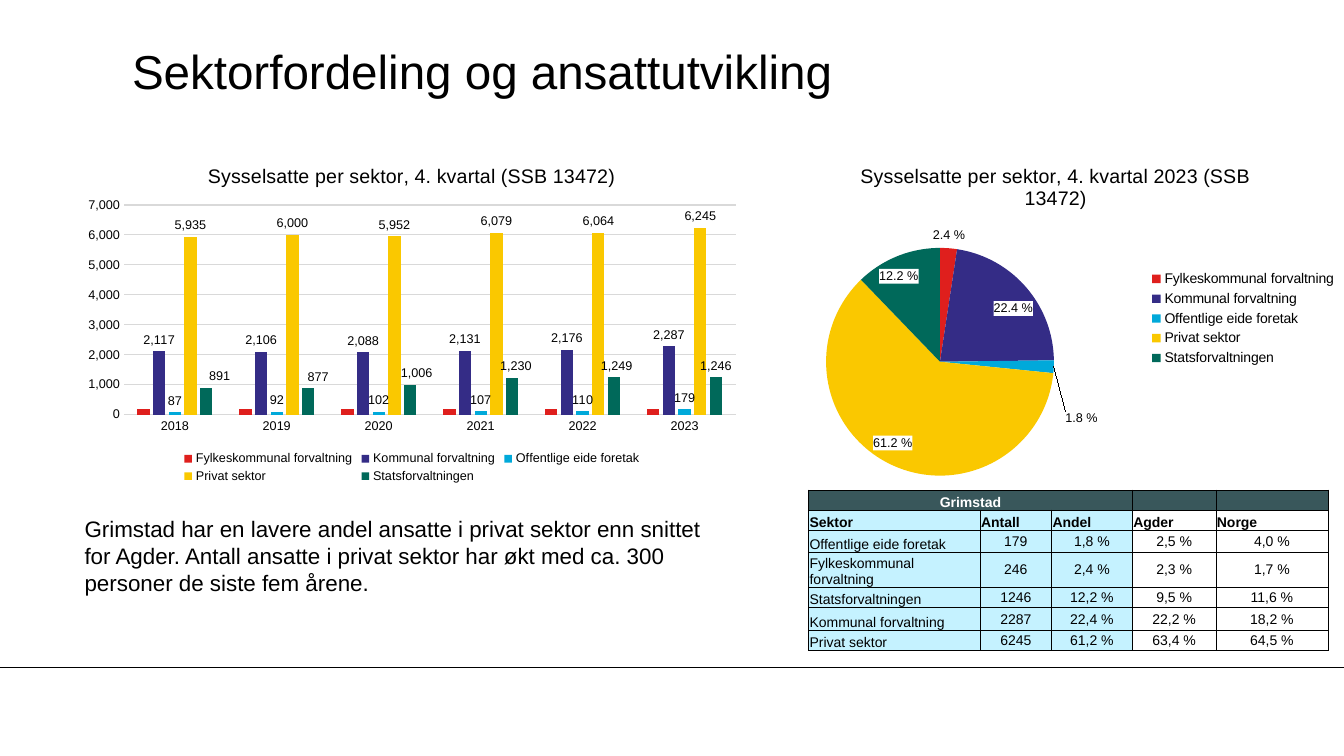
from lxml import etree
from pptx import Presentation
from pptx.chart.data import CategoryChartData as Data
from pptx.dml.color import RGBColor as Rgb
from pptx.enum.chart import XL_CHART_TYPE as Kind, XL_LABEL_POSITION as Spot
from pptx.enum.chart import XL_LEGEND_POSITION as Side, XL_TICK_MARK as Tick
from pptx.enum.text import MSO_ANCHOR as Anchor, PP_ALIGN as Align
from pptx.oxml import parse_xml
from pptx.oxml.ns import nsdecls, qn
from pptx.util import Inches, Pt

HUES = {
    "ink": "000000", "white": "FFFFFF", "grid": "D9D9D9",
    "head": "39575B", "pale": "C5F2FF",
    "Fylkeskommunal forvaltning": "DF1F1D",
    "Kommunal forvaltning": "342C86",
    "Offentlige eide foretak": "00A9DA",
    "Privat sektor": "FAC800",
    "Statsforvaltningen": "00695A",
}
YEARS = ["2018", "2019", "2020", "2021", "2022", "2023"]
STAFF = {
    "Fylkeskommunal forvaltning": [200] * 6,
    "Kommunal forvaltning": [2117, 2106, 2088, 2131, 2176, 2287],
    "Offentlige eide foretak": [87, 92, 102, 107, 110, 179],
    "Privat sektor": [5935, 6000, 5952, 6079, 6064, 6245],
    "Statsforvaltningen": [891, 877, 1006, 1230, 1249, 1246],
}
SHARES = [2.4, 22.4, 1.8, 61.2, 12.2]
NUDGES = [0.02, 0.015, 0.01, 0.006, 0.004]
COUNT = "#,##0"
SHARE = "0.0\\ %"
ROWS = [
    ["Grimstad", "", "", "", ""],
    ["Sektor", "Antall", "Andel", "Agder", "Norge"],
    ["Offentlige eide foretak", "179", "1,8 %", "2,5 %", "4,0 %"],
    ["Fylkeskommunal forvaltning", "246", "2,4 %", "2,3 %", "1,7 %"],
    ["Statsforvaltningen", "1246", "12,2 %", "9,5 %", "11,6 %"],
    ["Kommunal forvaltning", "2287", "22,4 %", "22,2 %", "18,2 %"],
    ["Privat sektor", "6245", "61,2 %", "63,4 %", "64,5 %"],
]
WIDTHS = [1.7, 0.71, 0.8, 0.83, 1.11]
HEIGHTS = [0.2, 0.2, 0.22, 0.33, 0.2, 0.23, 0.2]


def style(font, size, hue="ink", bold=False):
    font.name, font.size, font.bold = "Arial", Pt(size), bold
    font.color.rgb = Rgb.from_string(HUES[hue])


def write(frame, text, size=10, hue="ink", bold=False, align=Align.LEFT):
    para = frame.paragraphs[0]
    para.alignment = align
    if text:
        run = para.add_run()
        run.text = text
        style(run.font, size, hue, bold)
    else:
        para._p.get_or_add_endParaRPr().set("sz", str(size * 100))


def paint(fill, hue):
    fill.solid()
    fill.fore_color.rgb = Rgb.from_string(HUES[hue])


def place(owner, mode, **box):
    """Give a chart part a manual layout."""
    modes = "".join(f'<c:{k}Mode val="edge"/>' for k in "xy")
    inner = '<c:layoutTarget val="inner"/>' if mode == "plot" else ""
    sizes = "".join(f'<c:{k} val="{v}"/>' for k, v in box.items())
    node = parse_xml(f'<c:layout {nsdecls("c")}><c:manualLayout>{inner}{modes}'
                     f'{sizes}</c:manualLayout></c:layout>')
    for old in owner.findall(qn("c:layout")):
        owner.remove(old)
    if mode == "plot":
        owner.insert(0, node)
    else:
        owner.find(qn("c:legendPos")).addnext(node)


def nudge(labels, idx, x, y, code, spot, show):
    """Shift one data label away from its usual place."""
    flags = "".join(f'<c:show{k} val="{int(k == show)}"/>' for k in
                    ("LegendKey", "Val", "CatName", "SerName", "Percent", "BubbleSize"))
    node = parse_xml(
        f'<c:dLbl {nsdecls("c")}><c:idx val="{idx}"/><c:layout><c:manualLayout>'
        f'<c:x val="{x}"/><c:y val="{y}"/></c:manualLayout></c:layout>'
        f'<c:numFmt formatCode="{code}" sourceLinked="0"/>'
        f'<c:dLblPos val="{spot}"/>{flags}</c:dLbl>')
    labels._element.insert(idx if show == "Val" else 0, node)


class Deck:
    def __init__(self):
        self.pres = Presentation()
        self.pres.slide_width, self.pres.slide_height = Inches(13.33), Inches(7.5)
        self.slide = self.pres.slides.add_slide(self.pres.slide_layouts[6])
        self.shapes = self.slide.shapes

    def line(self, y):
        rule = self.shapes.add_connector(1, 0, Inches(y), Inches(13.33), Inches(y))
        rule.line.color.rgb = Rgb.from_string(HUES["ink"])
        rule.line.width = Pt(0.75)
        etree.SubElement(rule._element.spPr, qn("a:effectLst"))

    def text(self, box, text, size, anchor=Anchor.TOP, pad=None):
        frame = self.shapes.add_textbox(*map(Inches, box)).text_frame
        frame.word_wrap, frame.vertical_anchor = True, anchor
        if pad is not None:
            frame.margin_left = frame.margin_right = Inches(pad)
            frame.margin_top = frame.margin_bottom = Inches(pad)
        write(frame, text, size)

    def chart(self, kind, box, title, cats, series, side, size, plot, key):
        data = Data()
        data.categories = cats
        for name, vals in series.items():
            data.add_series(name, vals)
        chart = self.shapes.add_chart(kind, *map(Inches, box), data).chart
        style(chart.font, 10)
        chart.has_title = True
        write(chart.chart_title.text_frame, title, 14, align=Align.CENTER)
        chart.has_legend = True
        chart.legend.position, chart.legend.include_in_layout = side, False
        style(chart.legend.font, size)
        place(chart._chartSpace.chart.plotArea, "plot", **plot)
        place(chart.legend._element, "key", **key)
        chart.plots[0].vary_by_categories = kind == Kind.PIE
        return chart

    def labels(self, series, code, spot):
        tags = series.data_labels
        style(tags.font, 9)
        tags.number_format, tags.number_format_is_linked = code, False
        tags.position = spot
        return tags

    def bars(self, box, title):
        chart = self.chart(Kind.COLUMN_CLUSTERED, box, title, YEARS, STAFF,
                           Side.BOTTOM, 9, dict(x=0.073, y=0.169, w=0.907, h=0.612),
                           dict(x=0.155, y=0.88, w=0.69, h=0.11))
        plot = chart.plots[0]
        plot.gap_width, plot.overlap = 219, -27
        for axis in (chart.category_axis, chart.value_axis):
            axis.major_tick_mark = axis.minor_tick_mark = Tick.NONE
            style(axis.tick_labels.font, 9)
        grid = chart.value_axis.major_gridlines.format.line
        for line in (chart.category_axis.format.line, grid):
            line.color.rgb, line.width = Rgb.from_string(HUES["grid"]), Pt(0.75)
        chart.value_axis.format.line.fill.background()
        ticks = chart.value_axis.tick_labels
        ticks.number_format, ticks.number_format_is_linked = COUNT, False
        for i, series in enumerate(plot.series):
            paint(series.format.fill, series.name)
            if i:
                tags = self.labels(series, COUNT, Spot.OUTSIDE_END)
                tags.show_value = True
        for i, x in enumerate(NUDGES):
            nudge(tags, i, x, 0, COUNT, "outEnd", "Val")

    def pie(self, box, title):
        chart = self.chart(Kind.PIE, box, title, list(STAFF), {"Series 1": SHARES},
                           Side.RIGHT, 10, dict(x=0.102, y=0.294, w=0.395, h=0.665),
                           dict(x=0.655, y=0.35, w=0.34, h=0.3))
        series = chart.plots[0].series[0]
        for i, name in enumerate(STAFF):
            paint(series.points[i].format.fill, name)
        tags = self.labels(series, SHARE.replace("\\ %", "\\ %"), Spot.BEST_FIT)
        tags.show_percentage, tags.show_value = True, False
        # White plates behind the shares
        plate = parse_xml(f'<c:spPr {nsdecls("c", "a")}><a:solidFill><a:srgbClr '
                          f'val="{HUES["white"]}"/></a:solidFill></c:spPr>')
        tags._element.find(qn("c:numFmt")).addnext(plate)
        nudge(tags, 2, 0.01, 0.15, SHARE, "bestFit", "Percent")

    def table(self, box):
        table = self.shapes.add_table(len(ROWS), len(WIDTHS), *map(Inches, box)).table
        table.first_row = table.horz_banding = False
        for col, width in zip(table.columns, WIDTHS):
            col.width = Inches(width)
        for r, (row, height) in enumerate(zip(ROWS, HEIGHTS)):
            table.rows[r].height = Inches(height)
            for c, text in enumerate(row):
                mid = r > 1 and c > 0
                self.cell(table.cell(r, c), text, "white" if r == 0 else "ink", r < 2,
                          Align.CENTER if mid or r == 0 else Align.LEFT,
                          Anchor.MIDDLE if mid else Anchor.BOTTOM,
                          "head" if r == 0 else "pale" if c < 3 else None)
        table.cell(0, 0).merge(table.cell(0, 2))

    def cell(self, cell, text, hue, bold, align, anchor, back):
        cell.margin_left = cell.margin_right = cell.margin_top = Inches(0.01)
        cell.margin_bottom, cell.vertical_anchor = 0, anchor
        write(cell.text_frame, text, 10, hue, bold, align)
        if back:
            paint(cell.fill, back)
        else:
            cell.fill.background()
        props = cell._tc.get_or_add_tcPr()
        for i, side in enumerate("LRTB"):
            props.insert(i, parse_xml(
                f'<a:ln{side} {nsdecls("a")} w="{Pt(0.5)}"><a:solidFill><a:srgbClr '
                f'val="{HUES["ink"]}"/></a:solidFill></a:ln{side}>'))


def main():
    deck = Deck()
    # Heading and footer rule
    deck.line(6.62)
    deck.text((1.31, 0.32, 11.1, 0.75), "Sektorfordeling og ansattutvikling", 34,
              Anchor.MIDDLE, 0)
    # Comment on the figures
    deck.text((0.74, 5.06, 6.41, 0.91),
              "Grimstad har en lavere andel ansatte i privat sektor enn snittet for "
              "Agder. Antall ansatte i privat sektor har økt med ca. 300 personer de "
              "siste fem årene.", 16)
    # Table and charts
    deck.table((8.02, 4.86, 5.16, 1.61))
    deck.bars((0.74, 1.46, 6.69, 3.4), "Sysselsatte per sektor, 4. kvartal (SSB 13472)")
    deck.pie((7.61, 1.46, 5.72, 3.4), "Sysselsatte per sektor, 4. kvartal 2023 (SSB 13472)")
    deck.pres.save("out.pptx")


if __name__ == "__main__":
    main()
